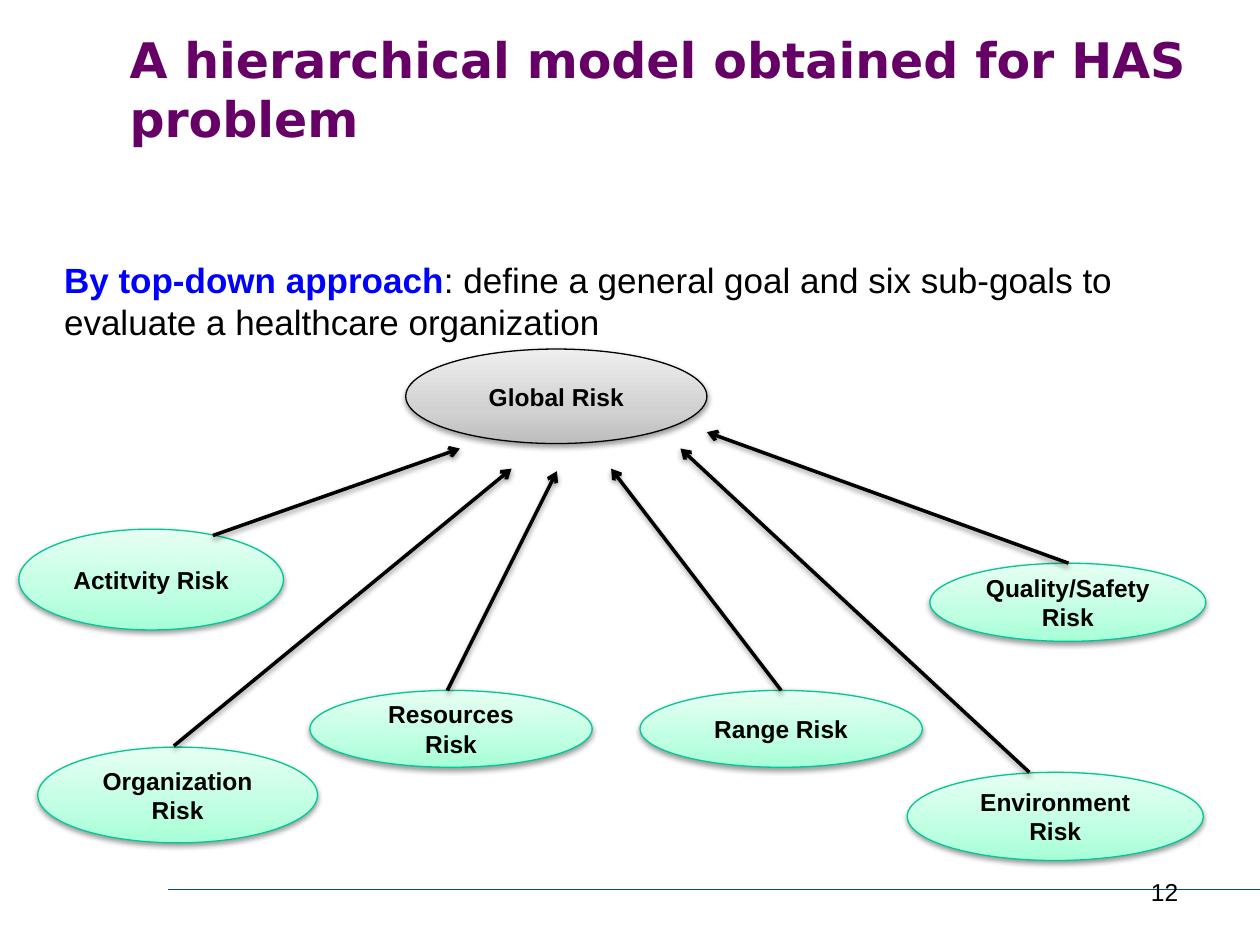
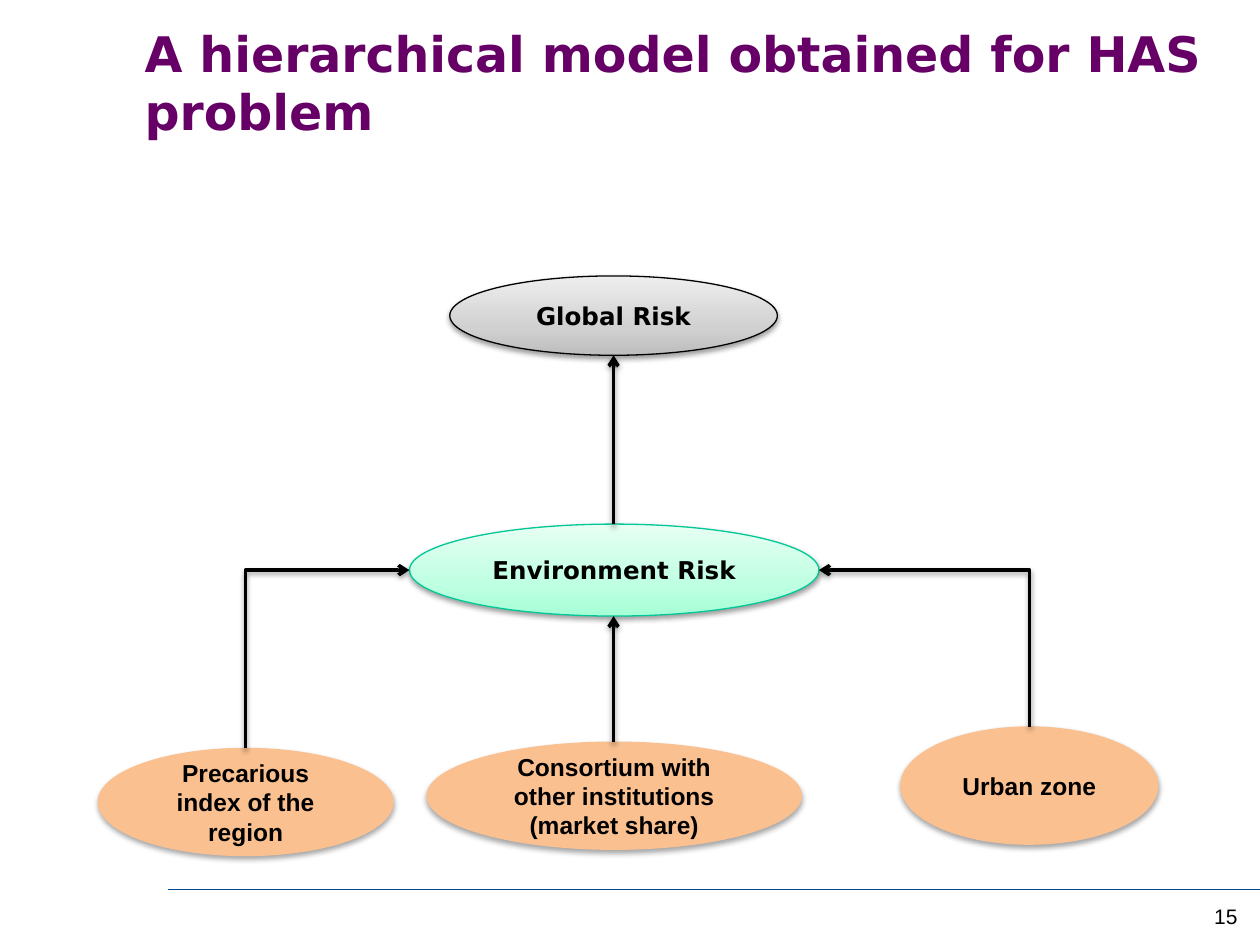
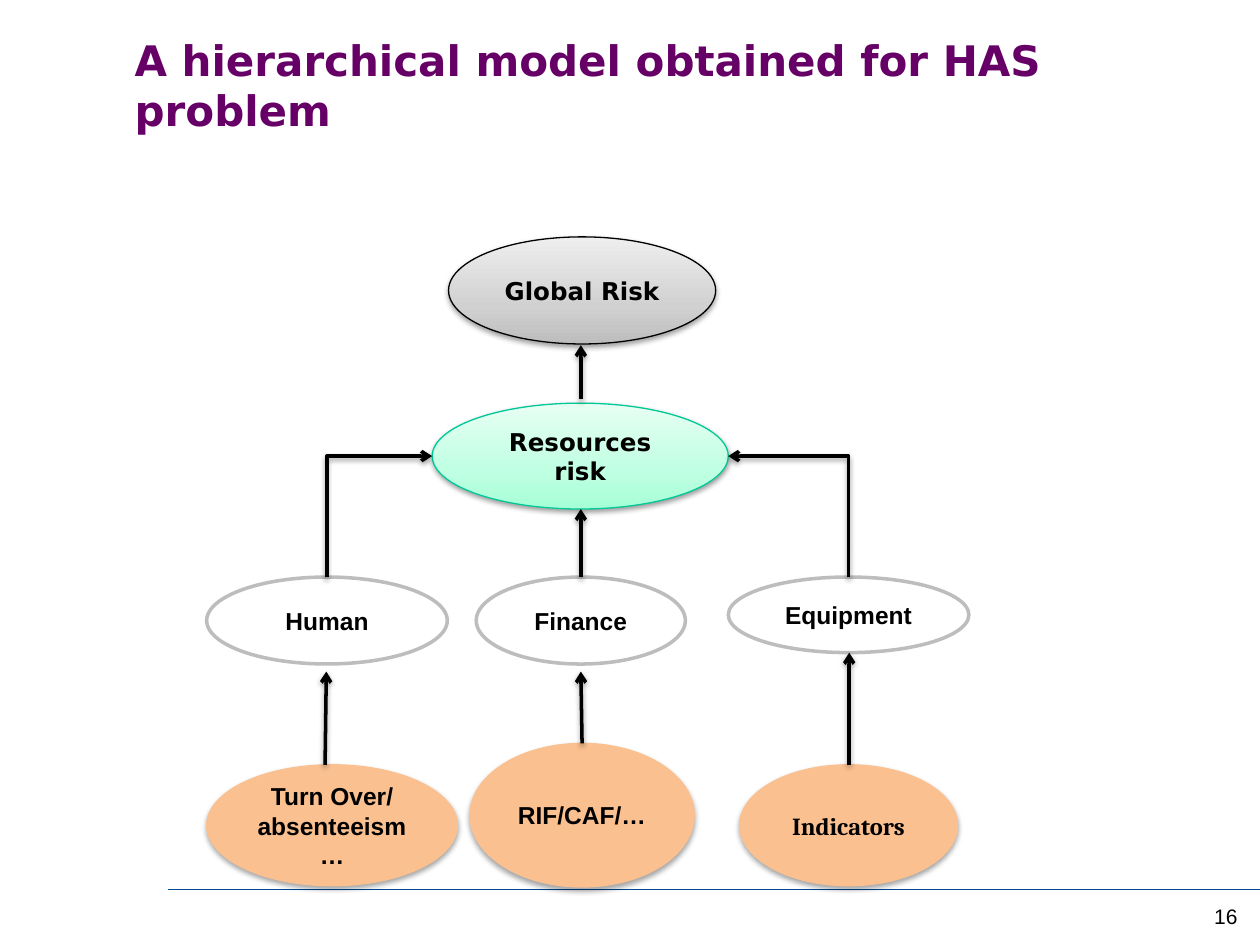
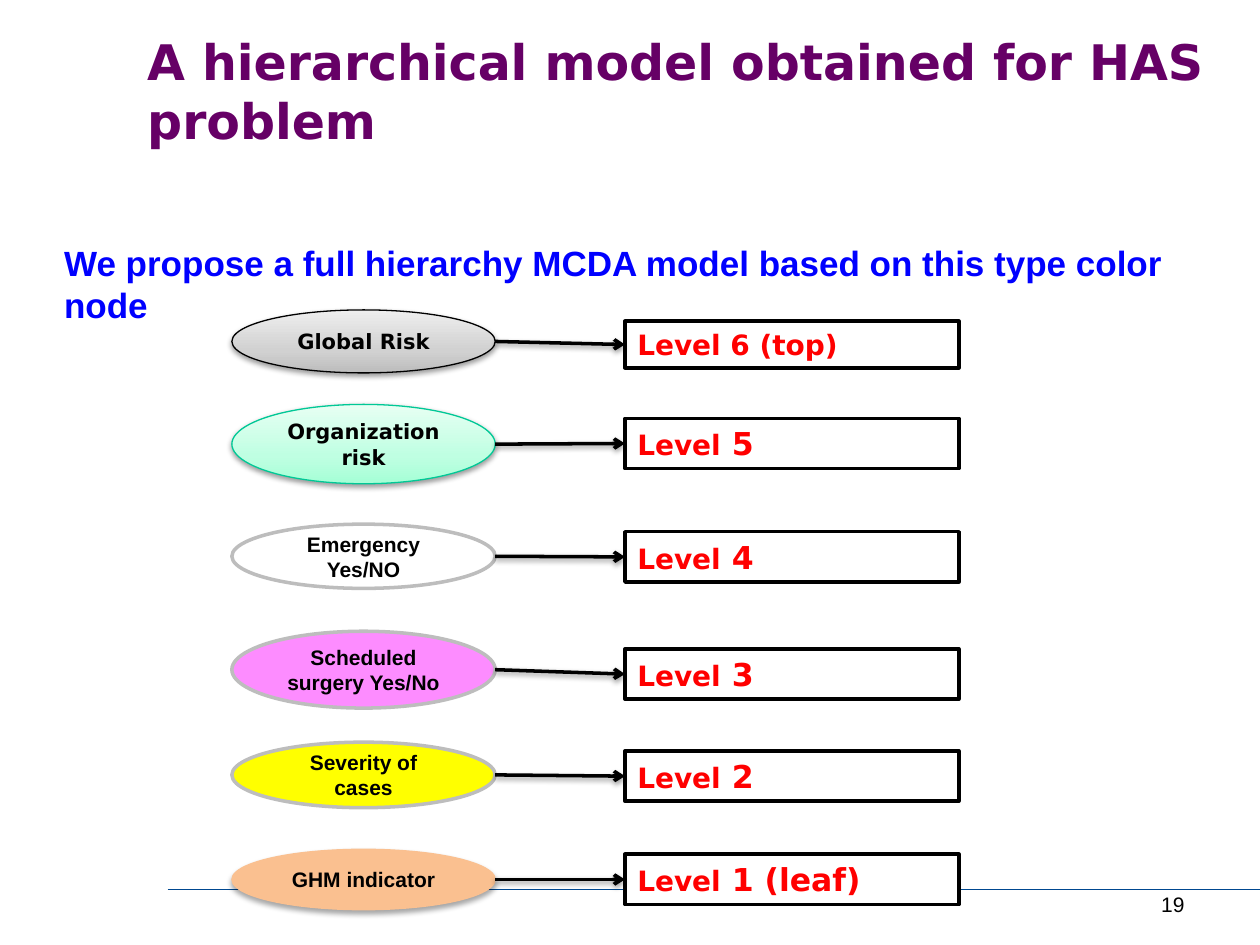
"""Build four slides showing the hierarchical risk model for the HAS problem."""
from copy import deepcopy

from lxml.etree import SubElement
from pptx import Presentation
from pptx.dml.color import RGBColor
from pptx.enum.shapes import MSO_CONNECTOR as Link, MSO_SHAPE as Shape
from pptx.enum.text import MSO_ANCHOR as Anchor, PP_ALIGN as Align
from pptx.oxml.ns import qn
from pptx.util import Inches, Pt

CELL = Inches(1)
COLUMNS, ROWS = 10, 7.5

BLACK = RGBColor(0x00, 0x00, 0x00)
WHITE = RGBColor(0xFF, 0xFF, 0xFF)
PURPLE = RGBColor(0x66, 0x00, 0x66)
BLUE = RGBColor(0x00, 0x00, 0xFF)
RED = RGBColor(0xFF, 0x00, 0x00)
NAVY = RGBColor(0x00, 0x48, 0x90)
GREEN = RGBColor(0x00, 0xC8, 0x96)
SILVER = RGBColor(0xBD, 0xBD, 0xBD)
PEACH = RGBColor(0xFA, 0xC0, 0x90)
PINK = RGBColor(0xFD, 0x8C, 0xFF)
YELLOW = RGBColor(0xFF, 0xFF, 0x00)
GRAYS = (SILVER, RGBColor(0xD1, 0xD1, 0xD1), RGBColor(0xEE, 0xEE, 0xEE))
MINTS = (RGBColor(0xA5, 0xFF, 0xD6), RGBColor(0xBF, 0xFF, 0xE2), RGBColor(0xE7, 0xFF, 0xF3))

SANS, HEADING, SERIF = "Arial", "DejaVu Sans", "Cambria"
TITLE = "A hierarchical model obtained for HAS problem"

STYLES = {
    "top": dict(colors=GRAYS, line=BLACK, width=0.75, opacity=38, distance=20000),
    "goal": dict(colors=MINTS, line=GREEN, width=0.75, opacity=38, distance=20000),
    "group": dict(colors=(WHITE,), line=SILVER, width=2, opacity=0, distance=0),
    "surgery": dict(colors=(PINK,), line=SILVER, width=2, opacity=0, distance=0),
    "severity": dict(colors=(YELLOW,), line=SILVER, width=2, opacity=0, distance=0),
    "leaf": dict(colors=(PEACH,), line=PEACH, width=0.75, opacity=35, distance=23000),
}

LEFT, NODE_WIDTH, LEVEL_LEFT, LEVEL_WIDTH = 1.84, 2.09, 4.96, 2.65

PAGES = [
    dict(
        title=(0.93, 0.21, 8.6, 0.98), title_size=28,
        number="12", number_at=(7.32, 6.91, 2.13, 0.27), number_size=14,
        lead=[("By top-down approach", dict(color=BLUE, bold=True)),
              ": define a general goal and six sub-goals to evaluate a healthcare organization"],
        lead_at=(0.41, 2, 9.18, 0.77), node_size=14,
        nodes=[
            ("Global Risk", "top", (3.22, 2.77, 2.39, 0.75), SANS),
            ("Environment Risk", "goal", (7.2, 6.13, 2.35, 0.7), SANS),
            ("Resources Risk", "goal", (2.46, 5.48, 2.24, 0.61), SANS),
            ("Organization Risk", "goal", (0.3, 5.93, 2.22, 0.76), SANS),
            ("Actitvity Risk", "goal", (0.15, 4.2, 2.1, 0.8), SANS),
            ("Quality/Safety Risk", "goal", (7.38, 4.47, 2.19, 0.62), SANS),
            ("Range Risk", "goal", (5.08, 5.48, 2.24, 0.61), SANS),
        ],
        arrows=[
            (1.38, 5.92, 4.06, 3.72), (1.69, 4.25, 3.65, 3.56), (3.55, 5.48, 4.42, 3.74),
            (8.17, 6.13, 5.4, 3.56), (8.48, 4.47, 5.61, 3.43), (6.2, 5.48, 4.85, 3.72),
        ],
    ),
    dict(
        title=(1.05, 0.16, 8.64, 0.98), title_size=28,
        number="15", number_at=(8.67, 7.12, 1.25, 0.5), number_size=12, node_size=14,
        nodes=[
            ("Global Risk", "top", (3.57, 2.19, 2.6, 0.63), HEADING),
            ("Environment Risk", "goal", (3.25, 4.16, 3.25, 0.73), HEADING),
            ("Precarious index of the region", "leaf", (0.78, 5.94, 2.34, 0.85), SANS),
            ("Urban zone", "leaf", (7.15, 5.77, 2.04, 0.93), SANS),
            ("Consortium with other institutions (market share)", "leaf",
             (3.39, 5.89, 2.97, 0.85), SANS),
        ],
        arrows=[(4.87, 4.16, 4.87, 2.82), (4.87, 5.89, 4.87, 4.89)],
        elbows=[("Precarious index of the region", "Environment Risk"),
                ("Urban zone", "Environment Risk")],
    ),
    dict(
        title=(0.97, 0.18, 8.72, 0.98), title_size=24,
        number="16", number_at=(8.67, 7.12, 1.25, 0.5), number_size=12, node_size=14,
        nodes=[
            ("Global Risk", "top", (3.56, 1.88, 2.12, 0.85), HEADING),
            ("Resources risk", "goal", (3.43, 3.2, 2.35, 0.84), HEADING),
            ("Human", "group", (1.64, 4.58, 1.91, 0.69), SANS),
            ("Finance", "group", (3.78, 4.58, 1.66, 0.69), SANS),
            ("Equipment", "group", (5.78, 4.58, 1.91, 0.6), SANS),
            ("Turn Over/ absenteeism\n…", "leaf", (1.64, 6.07, 1.99, 0.96), SANS),
            ("RIF/CAF/…", "leaf", (3.73, 5.9, 1.78, 1.14), SANS),
            ("Indicators", "leaf", (5.87, 6.07, 1.73, 0.96), SERIF),
        ],
        arrows=[
            (4.61, 3.17, 4.61, 2.74), (4.61, 4.58, 4.61, 4.04), (2.58, 6.07, 2.59, 5.33),
            (4.62, 5.9, 4.61, 5.33), (6.74, 6.07, 6.74, 5.18),
        ],
        elbows=[("Human", "Resources risk"), ("Equipment", "Resources risk")],
    ),
    dict(
        title=(1.07, 0.23, 8.62, 0.98), title_size=28,
        number="19", number_at=(7.17, 7.03, 2.33, 0.4), number_size=12,
        lead=[("We propose a full hierarchy MCDA model based on this type color node",
               dict(color=BLUE, bold=True))],
        lead_at=(0.41, 1.87, 9.42, 0.76), node_size=12,
        nodes=[
            ("Global Risk", "top", (LEFT, 2.46, NODE_WIDTH, 0.5), HEADING),
            ("Organization risk", "goal", (LEFT, 3.21, NODE_WIDTH, 0.63), HEADING),
            ("Emergency Yes/NO", "group", (LEFT, 4.16, NODE_WIDTH, 0.51), SANS),
            ("Scheduled surgery Yes/No", "surgery", (LEFT, 5.01, NODE_WIDTH, 0.61), SANS),
            ("Severity of cases", "severity", (LEFT, 5.89, NODE_WIDTH, 0.52), SANS),
            ("GHM indicator", "leaf", (LEFT, 6.74, NODE_WIDTH, 0.48), SANS),
        ],
        levels=[
            (" 6 (top)", 16, 2.55, 0.37), (" 5", 18, 3.32, 0.4), (" 4", 18, 4.22, 0.4),
            (" 3", 18, 5.15, 0.4), (" 2", 18, 5.96, 0.4), (" 1 (leaf)", 18, 6.78, 0.4),
        ],
    ),
]


def write(box, paragraphs, font=SANS, size=14, color=BLACK, bold=False,
          align=Align.LEFT, anchor=Anchor.TOP):
    """Fill a box with paragraphs of spans; a span is text or (text, changes)."""
    frame = box.text_frame
    frame.word_wrap = True
    frame.vertical_anchor = anchor
    for index, spans in enumerate(paragraphs):
        para = frame.add_paragraph() if index else frame.paragraphs[0]
        para.alignment = align
        for item in spans:
            text, changes = (item, {}) if isinstance(item, str) else item
            span = para.add_run()
            span.text = text
            span.font.name = font
            span.font.size = Pt(changes.get("size", size))
            span.font.bold = changes.get("bold", bold)
            span.font.color.rgb = changes.get("color", color)


def finish(item, color, width, opacity=0, distance=20000):
    """Set the line of a shape or connector, and its shadow if it has one."""
    item.line.color.rgb = color
    item.line.width = Pt(width)
    effects = SubElement(item._element.spPr, qn("a:effectLst"))
    if opacity:
        shadow = SubElement(effects, qn("a:outerShdw"), blurRad="40000", dist=str(distance),
                            dir="5400000", rotWithShape="0")
        tone = SubElement(shadow, qn("a:srgbClr"), val=str(BLACK))
        SubElement(tone, qn("a:alpha"), val=str(opacity * 1000))


deck = Presentation()
deck.slide_width = int(COLUMNS * CELL)
deck.slide_height = int(ROWS * CELL)

for plan in PAGES:
    page = deck.slides.add_slide(deck.slide_layouts[6])
    shapes = page.shapes

    footer_ends = [int(value * CELL) for value in (1.33, 7.06, COLUMNS, 7.06)]
    finish(shapes.add_connector(Link.STRAIGHT, *footer_ends), NAVY, 0.75)

    title = shapes.add_textbox(*[int(value * CELL) for value in plan["title"]])
    write(title, [[TITLE]], font=HEADING, size=plan["title_size"], color=PURPLE, bold=True,
          anchor=Anchor.MIDDLE)
    number = shapes.add_textbox(*[int(value * CELL) for value in plan["number_at"]])
    write(number, [[plan["number"]]], size=plan["number_size"], align=Align.RIGHT)
    if "lead" in plan:
        lead = shapes.add_textbox(*[int(value * CELL) for value in plan["lead_at"]])
        write(lead, [plan["lead"]], size=20)

    nodes = {}
    for name, kind, place, font in plan["nodes"]:
        style = STYLES[kind]
        node = shapes.add_shape(Shape.OVAL, *[int(value * CELL) for value in place])
        nodes[name] = node
        if len(style["colors"]) == 1:
            node.fill.solid()
            node.fill.fore_color.rgb = style["colors"][0]
        else:
            node.fill.gradient()
            node.fill.gradient_angle = 90
            stop_list = node._element.spPr.find(".//" + qn("a:gsLst"))
            stop_list.insert(1, deepcopy(stop_list[0]))
            for stop, share, color in zip(node.fill.gradient_stops, (0, 0.35, 1), style["colors"]):
                stop.position = share
                stop.color.rgb = color
        finish(node, style["line"], style["width"], style["opacity"], style["distance"])
        write(node, [[line] for line in name.split("\n")], font=font, size=plan["node_size"],
              bold=True, align=Align.CENTER, anchor=Anchor.MIDDLE)

    arrows = [([int(value * CELL) for value in ends], None) for ends in plan.get("arrows", [])]
    for node, (label, size, top, height) in zip(nodes.values(), plan.get("levels", [])):
        place = (LEVEL_LEFT, top, LEVEL_WIDTH, height)
        level = shapes.add_shape(Shape.RECTANGLE, *[int(value * CELL) for value in place])
        level.fill.solid()
        level.fill.fore_color.rgb = WHITE
        finish(level, BLACK, 2)
        write(level, [["Level", (label, dict(size=size))]], font=HEADING, size=16,
              color=RED, bold=True)
        ends = [node.left + node.width, node.top + node.height // 2,
                level.left, level.top + level.height // 2]
        arrows.append((ends, level))

    for ends, level in arrows:
        arrow = shapes.add_connector(Link.STRAIGHT, *ends)
        if level:
            arrow.end_connect(level, 1)
        finish(arrow, BLACK, 2, 38)
        SubElement(arrow._element.spPr.find(qn("a:ln")), qn("a:tailEnd"), type="arrow")

    for source_name, target_name in plan.get("elbows", []):
        source, target = nodes[source_name], nodes[target_name]
        from_left = source.left < target.left
        side = target.left if from_left else target.left + target.width
        elbow = shapes.add_connector(Link.ELBOW, side, target.top + target.height // 2,
                                     source.left + source.width // 2, source.top)
        elbow.end_connect(source, 0)
        joins = elbow._element.nvCxnSpPr.cNvCxnSpPr
        start = SubElement(joins, qn("a:stCxn"), id=str(target.shape_id),
                           idx="2" if from_left else "6")
        joins.insert(0, start)
        elbow._element.spPr.find(qn("a:prstGeom")).set("prst", "bentConnector2")
        finish(elbow, BLACK, 2, 38)
        SubElement(elbow._element.spPr.find(qn("a:ln")), qn("a:headEnd"), type="arrow")

deck.save("out.pptx")
